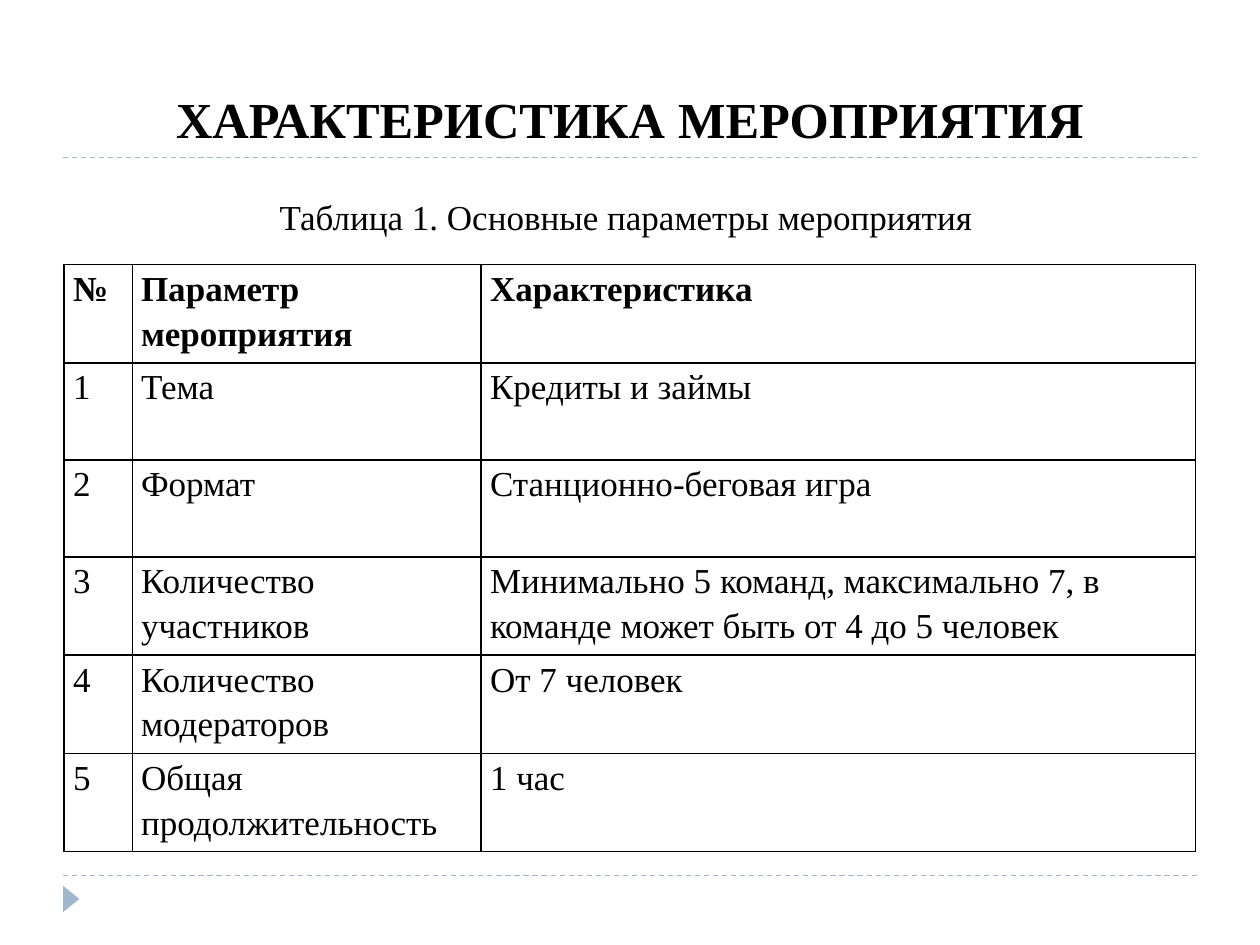
from lxml import etree
from pptx import Presentation
from pptx import util as u
from pptx.dml.color import RGBColor
from pptx.enum import dml, shapes, text
from pptx.oxml import parse_xml
from pptx.oxml.ns import qn

DRAWING_NS = "http://schemas.openxmlformats.org/drawingml/2006/main"
ALIGN = text.PP_ALIGN
ANCHOR = text.MSO_ANCHOR


def color(value):
    return RGBColor.from_string(value)


def apply(target, values):
    for name, value in values.items():
        setattr(target, name, value)


class SlideBuilder:
    font = "Times New Roman"
    ink = "000000"
    accent = "9FB8CD"
    body_size = 20
    cell_paragraph = {
        "line_spacing": 1.15,
        "space_before": u.Pt(3),
        "space_after": u.Pt(3),
    }
    cell_margins = {
        "margin_left": u.Inches(0.07),
        "margin_right": u.Inches(0.07),
        "margin_top": 0,
        "margin_bottom": 0,
    }

    def __init__(self, slide):
        self.slide = slide

    def add_text(self, frame, content, size=body_size, bold=False, **paragraph_format):
        paragraph = frame.paragraphs[0]
        apply(paragraph, paragraph_format)
        run = paragraph.add_run()
        run.text = content
        apply(run.font, {"name": self.font, "size": u.Pt(size), "bold": bold})
        run.font.color.rgb = color(self.ink)
        return run

    def title(self, content, left, top, width, height):
        shape = self.slide.shapes.title
        apply(shape, {
            "left": u.Inches(left), "top": u.Inches(top),
            "width": u.Inches(width), "height": u.Inches(height),
        })
        apply(shape.text_frame, {
            "auto_size": text.MSO_AUTO_SIZE.NONE,
            "vertical_anchor": ANCHOR.BOTTOM,
        })
        run = self.add_text(shape.text_frame, content, 36, True, alignment=ALIGN.CENTER)
        run.font._element.set("cap", "small")

    def rule(self, left, right, y):
        line = self.slide.shapes.add_connector(
            shapes.MSO_CONNECTOR.STRAIGHT,
            u.Inches(left), u.Inches(y), u.Inches(right), u.Inches(y))
        apply(line.line, {
            "width": u.Pt(0.75), "dash_style": dml.MSO_LINE.DASH,
        })
        line.line.color.rgb = color(self.accent)
        etree.SubElement(line._element.spPr, qn("a:effectLst"))

    def triangle(self, left, top, width, height, rotation):
        shape = self.slide.shapes.add_shape(
            shapes.MSO_SHAPE.ISOSCELES_TRIANGLE,
            u.Inches(left), u.Inches(top), u.Inches(width), u.Inches(height))
        shape.rotation = rotation
        shape.shadow.inherit = False
        shape.fill.solid()
        shape.fill.fore_color.rgb = color(self.accent)
        shape.line.fill.background()

    def caption(self, content, left, top, width, height):
        box = self.slide.shapes.add_textbox(
            u.Inches(left), u.Inches(top), u.Inches(width), u.Inches(height))
        apply(box.text_frame, {
            "word_wrap": False,
            "auto_size": text.MSO_AUTO_SIZE.SHAPE_TO_FIT_TEXT,
            "vertical_anchor": ANCHOR.MIDDLE,
        })
        self.add_text(box.text_frame, content, alignment=ALIGN.JUSTIFY)

    def border(self, cell, width=1):
        properties = cell._tc.get_or_add_tcPr()
        for side in "LRTB":
            properties.append(parse_xml(
                f'<a:ln{side} xmlns:a="{DRAWING_NS}" w="{u.Pt(width)}">'
                f'<a:solidFill><a:srgbClr val="{self.ink}"/></a:solidFill>'
                f'</a:ln{side}>'))

    def table(self, rows, left, top, widths, heights):
        table = self.slide.shapes.add_table(
            len(rows), len(widths), u.Inches(left), u.Inches(top),
            u.Inches(sum(widths)), u.Inches(sum(heights))).table
        apply(table, {"first_row": False, "horz_banding": False})
        for column, width in zip(table.columns, widths):
            column.width = u.Inches(width)
        for index, (row, height, values) in enumerate(zip(table.rows, heights, rows)):
            row.height = u.Inches(height)
            is_header = index == 0
            for position, (cell, value) in enumerate(zip(row.cells, values)):
                apply(cell, self.cell_margins)
                self.border(cell)
                cell.fill.background()
                justified = is_header or position == 0
                self.add_text(cell.text_frame, value, bold=is_header,
                              alignment=ALIGN.JUSTIFY if justified else ALIGN.LEFT,
                              **self.cell_paragraph)


def main():
    presentation = Presentation()
    presentation.slide_width = u.Inches(10)
    presentation.slide_height = u.Inches(7.5)
    title_only = presentation.slide_layouts[5]
    builder = SlideBuilder(presentation.slides.add_slide(title_only))

    for y in (6.95, 1.25):
        builder.rule(0.5, 9.5, y)
    builder.triangle(0.46, 7.07, 0.21, 0.13, rotation=90)
    builder.title("характеристика мероприятия", 0.5, 0.25, 9, 1)

    parameters = [
        ("Тема", "Кредиты и займы"),
        ("Формат", "Станционно-беговая игра"),
        ("Количество участников",
         "Минимально 5 команд, максимально 7, в команде может быть от 4 до 5 человек"),
        ("Количество модераторов", "От 7 человек"),
        ("Общая продолжительность", "1 час"),
    ]
    rows = [("№", "Параметр мероприятия", "Характеристика")]
    rows += [(str(number), *pair) for number, pair in enumerate(parameters, 1)]
    builder.table(rows, 0.51, 2.1, widths=(0.54, 2.77, 5.67),
                  heights=(0.78, 0.77, 0.77, 0.78, 0.78, 0.78))
    builder.caption("Таблица 1. Основные параметры мероприятия", 2.12, 1.5, 5.75, 0.44)

    presentation.save("out.pptx")


if __name__ == "__main__":
    main()
